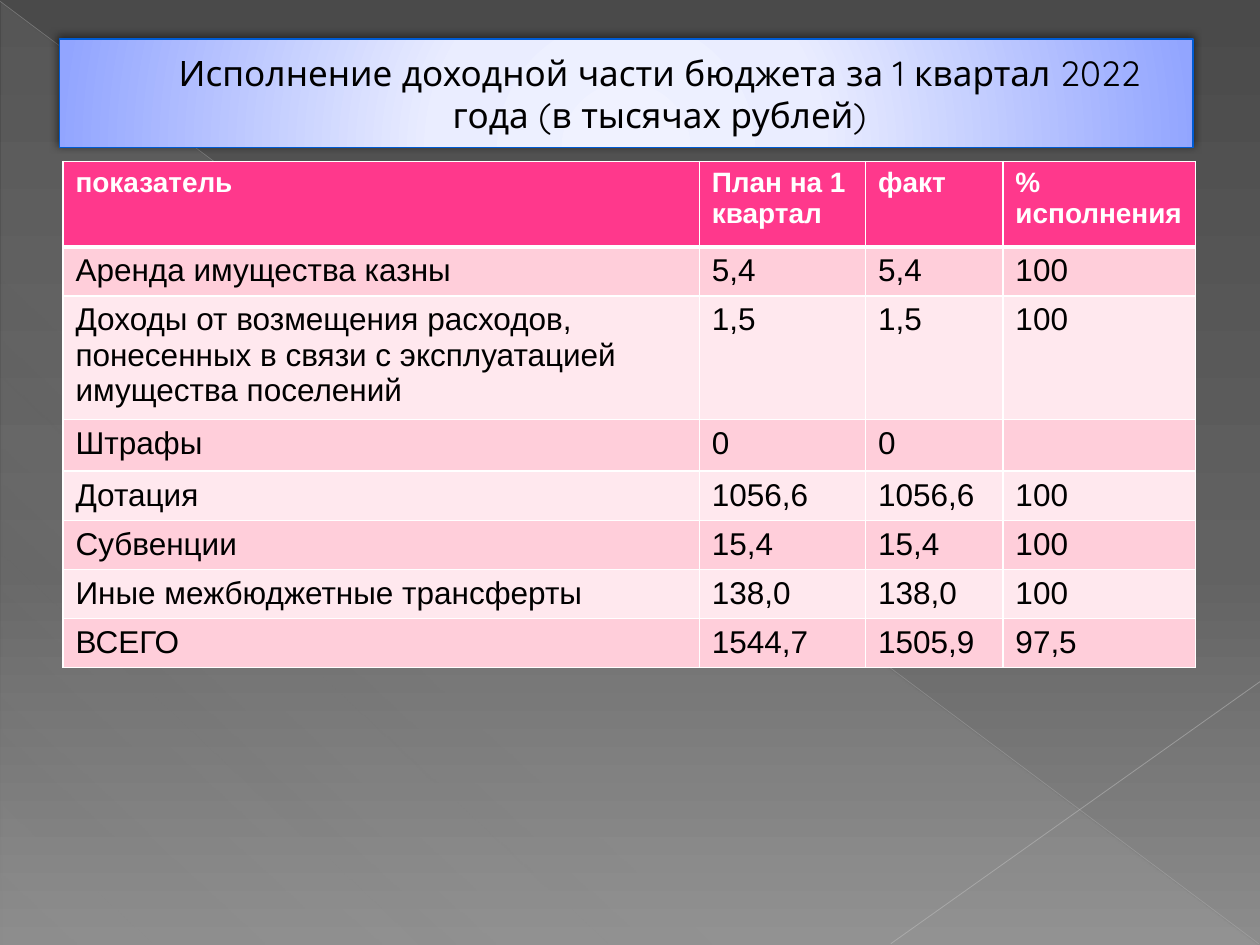
from lxml import etree
from pptx import Presentation
from pptx.dml.color import RGBColor
from pptx.enum.shapes import MSO_CONNECTOR, MSO_SHAPE
from pptx.enum.text import MSO_ANCHOR, PP_ALIGN
from pptx.oxml.ns import qn
from pptx.util import Inches, Pt

RECTANGLE, TRIANGLE = MSO_SHAPE.RECTANGLE, MSO_SHAPE.RIGHT_TRIANGLE
STRAIGHT = MSO_CONNECTOR.STRAIGHT
CENTER, MIDDLE = PP_ALIGN.CENTER, MSO_ANCHOR.MIDDLE

COLORS = {
    "dark": "4A4A4A", "gray": "626262", "light": "8C8C8C",
    "veil": "D2D2D2", "long_line": "BFBFBF", "short_line": "C6C6C6",
    "title_core": "F0F2FF", "title_mid": "EAEDFF", "title_edge": "92A5FF",
    "title_line": "005BD3", "header": "FF388C", "odd": "FFCEDA", "even": "FFE8EE",
    "white": "FFFFFF", "black": "000000",
}
TITLE = "Исполнение доходной части бюджета за 1 квартал 2022 года (в тысячах рублей)"
ROWS = [
    ("показатель", "План на 1 квартал", "факт", "% исполнения"),
    ("Аренда имущества казны", "5,4", "5,4", "100"),
    ("Доходы от возмещения расходов, понесенных в связи с эксплуатацией "
     "имущества поселений", "1,5", "1,5", "100"),
    ("Штрафы", "0", "0", ""),
    ("Дотация", "1056,6", "1056,6", "100"),
    ("Субвенции", "15,4", "15,4", "100"),
    ("Иные межбюджетные трансферты", "138,0", "138,0", "100"),
    ("ВСЕГО", "1544,7", "1505,9", "97,5"),
]
COLUMN_WIDTHS = (5.05, 1.32, 1.09, 1.53)
ROW_HEIGHT = 0.39
TALL_ROWS = {0: 0.68, 2: 0.98, 3: 0.41}


def color(name):
    return RGBColor.from_string(COLORS[name])


def add(parent, tag, **attributes):
    values = {key: str(value) for key, value in attributes.items()}
    return etree.SubElement(parent, qn(tag), values)


def add_color(parent, name, opacity=100):
    element = add(parent, "a:srgbClr", val=COLORS[name])
    if opacity < 100:
        add(element, "a:alpha", val=opacity * 1000)


def set_gradient(fill, properties, stops, angle=None):
    fill.background()
    empty = properties.find(qn("a:noFill"))
    gradient = etree.Element(qn("a:gradFill"), rotWithShape="1")
    stop_list = add(gradient, "a:gsLst")
    for position, name, opacity in stops:
        add_color(add(stop_list, "a:gs", pos=position * 1000), name, opacity)
    if angle is None:
        add(add(gradient, "a:path", path="circle"), "a:fillToRect",
            l=50000, t=155000, r=50000, b=-55000)
    else:
        add(gradient, "a:lin", ang=angle * 60000, scaled=0)
    properties.replace(empty, gradient)


def add_box(slide, kind, box):
    shape = slide.shapes.add_shape(kind, *map(Inches, box))
    shape.shadow.inherit = False
    return shape


def add_thin_line(slide, start, end, name, width, opacity):
    line = slide.shapes.add_connector(STRAIGHT, *map(Inches, start + end))
    line.line.width = Pt(width)
    line.line.color.rgb = color(name)
    properties = line._element.spPr
    add(properties.find(".//" + qn("a:srgbClr")), "a:alpha", val=opacity * 1000)
    add(properties, "a:effectLst")


def draw_backdrop(slide, width, height):
    fill = slide.background.fill
    fill.background()
    set_gradient(fill, slide.element.find(".//" + qn("p:bgPr")),
                 [(0, "dark", 100), (60, "gray", 100), (100, "light", 100)], 90)
    veil = add_box(slide, TRIANGLE, (0.01, 0.02, width - 0.02, height - 0.02))
    set_gradient(veil.fill, veil._element.spPr,
                 [(0, "veil", 10), (70, "veil", 8), (100, "veil", 1)], 133)
    veil.line.fill.background()
    bottom = height - 0.01
    add_thin_line(slide, (0, 0.01), (width - 0.01, bottom), "long_line", 0.39, 35)
    add_thin_line(slide, (width, 5.41), (7.07, bottom), "short_line", 0.47, 45)


def draw_title(slide, box):
    banner = add_box(slide, RECTANGLE, box)
    properties = banner._element.spPr
    set_gradient(banner.fill, properties, [
        (0, "title_core", 100), (34, "title_mid", 100), (100, "title_edge", 100)])
    banner.line.color.rgb = color("title_line")
    banner.line.width = Pt(0.75)
    shadow = add(properties.find(qn("a:effectLst")), "a:outerShdw",
                 blurRad=Pt(5), dist=Pt(2), dir=245 * 60000, rotWithShape=0)
    add_color(shadow, "black", 50)
    frame = banner.text_frame
    frame.word_wrap = True
    frame.vertical_anchor = MIDDLE
    frame.text = TITLE
    paragraph = frame.paragraphs[0]
    paragraph.alignment = CENTER
    paragraph._p.get_or_add_pPr().set("marL", str(Inches(0.53)))
    paragraph.font.name = "Quicksand"
    paragraph.font.size = Pt(20)
    paragraph.font.color.rgb = color("black")


def set_borders(cell, bottom_width):
    properties = cell._tc.get_or_add_tcPr()
    widths = {"a:lnL": 1, "a:lnR": 1, "a:lnT": 1, "a:lnB": bottom_width}
    for index, (tag, width) in enumerate(widths.items()):
        border = etree.Element(qn(tag), w=str(Pt(width)))
        add_color(add(border, "a:solidFill"), "white")
        properties.insert(index, border)


def fill_cell(cell, text, row_index):
    is_header = row_index == 0
    fill_name = "header" if is_header else ("even", "odd")[row_index % 2]
    cell.fill.solid()
    cell.fill.fore_color.rgb = color(fill_name)
    set_borders(cell, 3 if is_header else 1)
    cell.text = text
    font = cell.text_frame.paragraphs[0].font
    font.name = "Arial"
    font.size = Pt(16 if is_header else 18)
    font.bold = is_header
    font.color.rgb = color("white" if is_header else "black")


def draw_budget_table(slide, left, top):
    heights = [TALL_ROWS.get(index, ROW_HEIGHT) for index in range(len(ROWS))]
    table = slide.shapes.add_table(
        len(ROWS), len(COLUMN_WIDTHS), Inches(left), Inches(top),
        Inches(sum(COLUMN_WIDTHS)), Inches(sum(heights))).table
    for column, width in zip(table.columns, COLUMN_WIDTHS):
        column.width = Inches(width)
    for row_index, (row, height, texts) in enumerate(zip(table.rows, heights, ROWS)):
        row.height = Inches(height)
        for cell, text in zip(row.cells, texts):
            fill_cell(cell, text, row_index)


def main():
    width, height = 10, 7.5
    presentation = Presentation()
    presentation.slide_width = Inches(width)
    presentation.slide_height = Inches(height)
    slide = presentation.slides.add_slide(presentation.slide_layouts[6])
    draw_backdrop(slide, width, height)
    draw_title(slide, (0.47, 0.31, 9, 0.86))
    draw_budget_table(slide, 0.5, 1.28)
    presentation.save("out.pptx")


if __name__ == "__main__":
    main()
